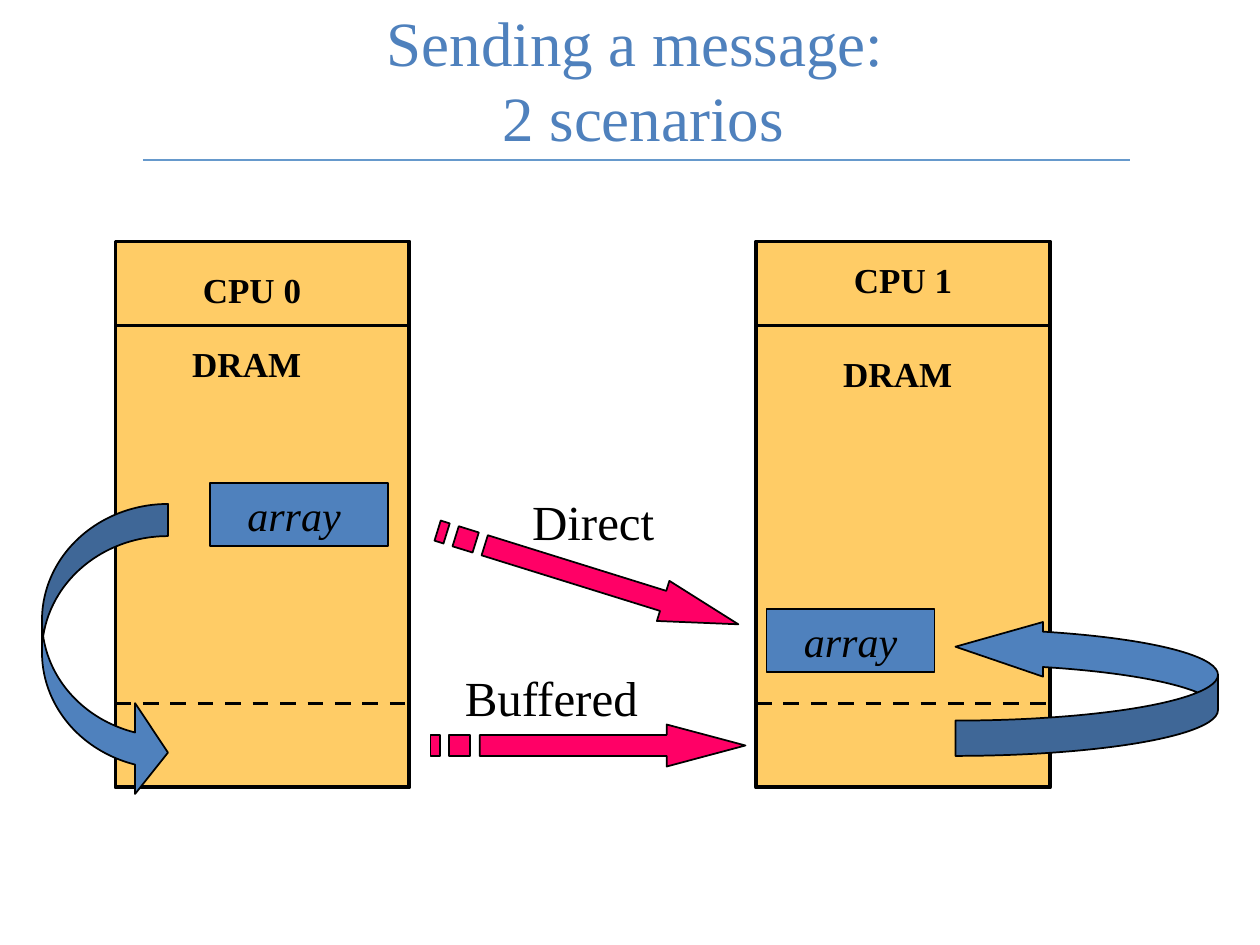
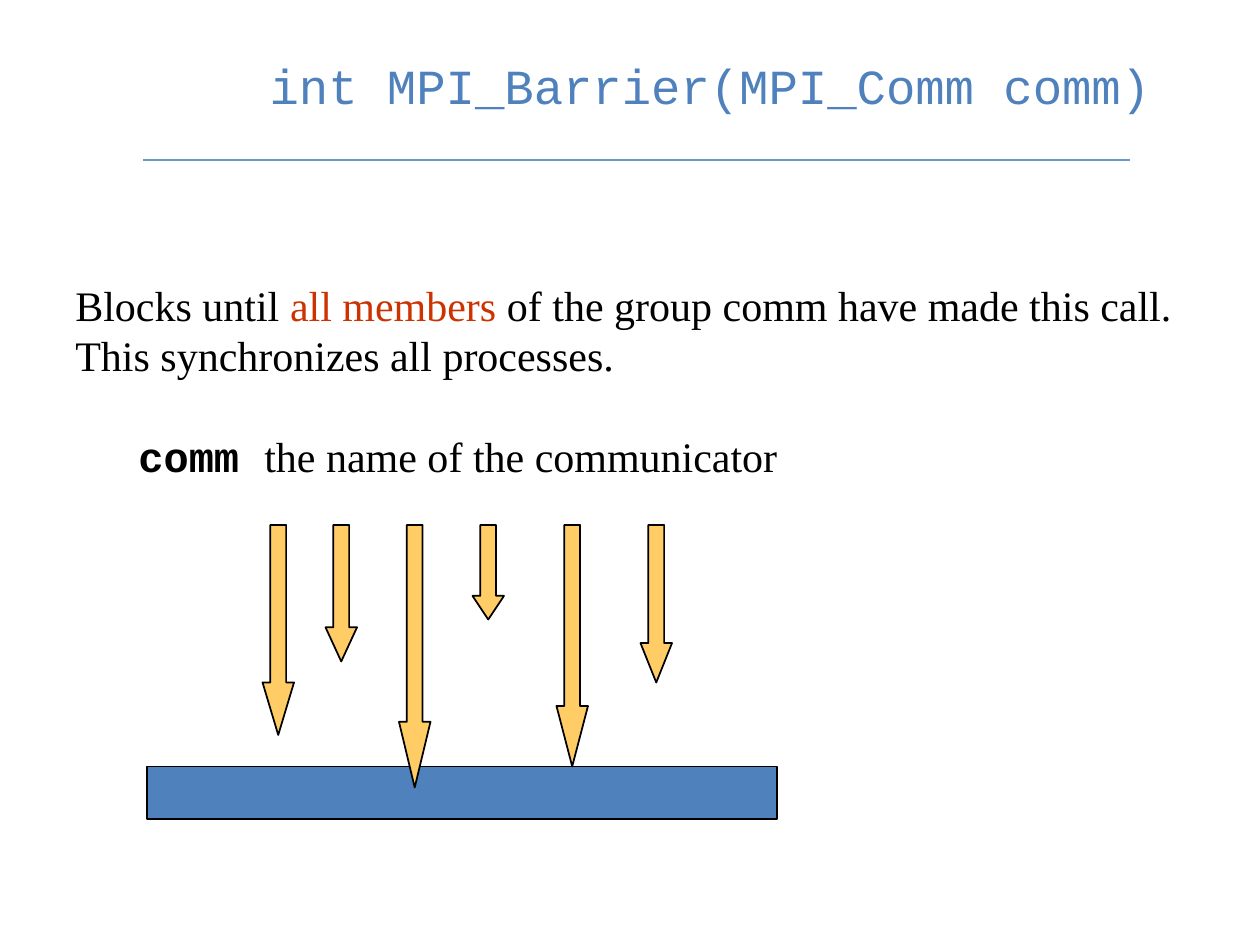
import pptx
import pptx.util
import pptx.dml.color
import pptx.enum.dml
import pptx.enum.shapes
import pptx.enum.text
import lxml.etree
from typing import NamedTuple

CELL = 76200  # the grid has twelve cells to the inch
COLS, ROWS = 120, 90
BLUE, GOLD, PINK, RED = "4F81BD", "FFCC66", "FF0066", "CC3300"
BLACK, RULE = "000000", "6699CC"
SERIF, MONO = "Times New Roman", "Courier New"
KIND = pptx.enum.shapes.MSO_SHAPE
ALIGN = pptx.enum.text.PP_ALIGN
ANCHOR = pptx.enum.text.MSO_ANCHOR


class Box(NamedTuple):
    """Left, top, width and height in grid cells."""
    x: float
    y: float
    w: float
    h: float


class Face(NamedTuple):
    size: int
    name: str = SERIF
    color: str = BLACK
    bold: bool = False
    slant: bool = False


class Label(NamedTuple):
    text: str
    box: Box
    face: Face


class Node(NamedTuple):
    """A memory column with its array."""
    x: float
    array: Box


class Drop(NamedTuple):
    x: float
    size: float


HEAD = Face(20, bold=True)
NAME = Face(24, slant=True)
WAY = Face(28)
BODY = Face(24)

NODES = [Node(11, Box(20, 46, 17, 6)), Node(72, Box(73, 58, 16, 6))]
LABELS = [
    Label("CPU 0", Box(17, 25, 14, 5.2), HEAD),
    Label("DRAM", Box(17, 32, 13, 5.2), HEAD),
    Label("array", Box(20, 46, 16, 6), NAME),
    Label("CPU 1", Box(79, 24, 14, 5.2), HEAD),
    Label("DRAM", Box(79, 33, 13, 5.2), HEAD),
    Label("array", Box(73, 58, 16, 6), NAME),
    Label("Direct", Box(47, 46.2, 19, 6.8), WAY),
    Label("Buffered", Box(43, 63, 19, 6.8), WAY),
]
DROPS = [Drop(25, 20), Drop(31, 13), Drop(38, 25),
         Drop(45, 9), Drop(53, 23), Drop(61, 15)]
# Outlines of the dashed arrow, in tenths of a cell
DASHES = [
    [(225, 0), (225, 10), (47, 10), (47, 30), (225, 30), (225, 40), (300, 20)],
    [(18, 10), (18, 30), (38, 30), (38, 10)],
    [(0, 10), (0, 30), (9, 30), (9, 10)],
]


def cells(*counts: float) -> list:
    return [pptx.util.Emu(round(n * CELL)) for n in counts]


def rgb(code: str):
    return pptx.dml.color.RGBColor.from_string(code)


def paint(shape, fill: str, width: float = 1) -> None:
    shape.shadow.inherit = False
    shape.fill.solid()
    shape.fill.fore_color.rgb = rgb(fill)
    shape.line.color.rgb = rgb(BLACK)
    shape.line.width = pptx.util.Pt(width)


def style(run, face: Face) -> None:
    font = run.font
    font.size = pptx.util.Pt(face.size)
    font.name = face.name
    font.color.rgb = rgb(face.color)
    font.bold = face.bold
    font.italic = face.slant


def form(slide, kind, box: Box, fill: str, width: float = 1, adjust=()):
    shape = slide.shapes.add_shape(kind, *cells(*box))
    paint(shape, fill, width)
    for i, value in enumerate(adjust):
        shape.adjustments[i] = value
    return shape


def level(slide, x: float, y: float, w: float, color: str = BLACK,
          width: float = 2.25, dash: bool = False) -> None:
    """Draw a horizontal line."""
    line = slide.shapes.add_connector(
        pptx.enum.shapes.MSO_CONNECTOR.STRAIGHT, *cells(x, y, x + w, y))
    line.line.color.rgb = rgb(color)
    line.line.width = pptx.util.Pt(width)
    if dash:
        line.line.dash_style = pptx.enum.dml.MSO_LINE.DASH
    props = line._element.spPr
    lxml.etree.SubElement(props, pptx.oxml.ns.qn("a:effectLst"))


def frame(slide, box: Box):
    text = slide.shapes.add_textbox(*cells(*box)).text_frame
    text.word_wrap = True
    return text


def write(slide, label: Label, align=ALIGN.CENTER, anchor=ANCHOR.TOP) -> None:
    text = frame(slide, label.box)
    text.text = label.text
    text.vertical_anchor = anchor
    line = text.paragraphs[0]
    line.alignment = align
    for run in line.runs:
        style(run, label.face)


def start(deck, title: Label, align):
    """Add a slide with its title and the rule below it."""
    slide = deck.slides.add_slide(deck.slide_layouts[6])
    level(slide, 13.6, 15.25, 94, RULE, 0.75)
    write(slide, title, align, ANCHOR.MIDDLE)
    return slide


def column(slide, node: Node) -> None:
    form(slide, KIND.RECTANGLE, Box(node.x, 23, 28, 52), GOLD, 2.25)
    level(slide, node.x, 31, 28)
    level(slide, node.x, 67, 28, dash=True)
    form(slide, KIND.RECTANGLE, node.array, BLUE)


def dart(slide, x: float, y: float, turn: float = 0) -> None:
    """Draw an arrow with a broken tail."""
    pen = slide.shapes.build_freeform(*DASHES[0][0], scale=CELL / 10)
    for i, points in enumerate(DASHES):
        if i:
            pen.move_to(*points[0])
        pen.add_line_segments(points[1:], close=True)
    shape = pen.convert_to_shape(*cells(x, y))
    paint(shape, PINK)
    shape.rotation = turn


def send(deck) -> None:
    title = Label("Sending a message: \v2 scenarios",
                  Box(11, 0, 100.5, 15), Face(36, color=BLUE))
    slide = start(deck, title, ALIGN.CENTER)
    for node in NODES:
        column(slide, node)
    form(slide, KIND.CURVED_RIGHT_ARROW, Box(4, 48, 12, 28), BLUE,
         adjust=(0.255, 0.721, 0.261))
    back = form(slide, KIND.CURVED_LEFT_ARROW, Box(91, 59, 25, 13), BLUE,
                adjust=(0.259, 0.4, 0.641))
    back._element.spPr.xfrm.set("flipV", "1")
    dart(slide, 41, 69)
    dart(slide, 41, 53, 17.3)
    for label in LABELS:
        write(slide, label)


def wait(deck) -> None:
    title = Label("int MPI_Barrier(MPI_Comm comm)",
                  Box(24.5, 0.6, COLS - 24.5, 15), Face(28, MONO, BLUE))
    slide = start(deck, title, ALIGN.LEFT)
    text = frame(slide, Box(6, 26, 108, 20.4))
    lines = [
        [("Blocks until ", BODY), ("all members", BODY._replace(color=RED)),
         (" of the group comm have made this call.", BODY)],
        [("This synchronizes all processes.", BODY)],
        [("comm", Face(24, MONO, bold=True)),
         (" \tthe name of the communicator", BODY)],
    ]
    for i, parts in enumerate(lines):
        line = text.add_paragraph() if i else text.paragraphs[0]
        for words, face in parts:
            run = line.add_run()
            run.text = words
            style(run, face)
    line.space_before = pptx.util.Pt(28.8)
    line.level = 1
    props = line._p.get_or_add_pPr()
    props.set("marL", str(6 * CELL))
    props.set("indent", "0")

    form(slide, KIND.RECTANGLE, Box(14, 73, 60, 5), BLUE)
    for drop in DROPS:
        form(slide, KIND.DOWN_ARROW, Box(drop.x, 50, 3, drop.size), GOLD,
             adjust=(0.5, drop.size / 12))


def main() -> None:
    deck = pptx.Presentation()
    deck.slide_width, deck.slide_height = cells(COLS, ROWS)
    send(deck)
    wait(deck)
    deck.save("out.pptx")


if __name__ == "__main__":
    main()
